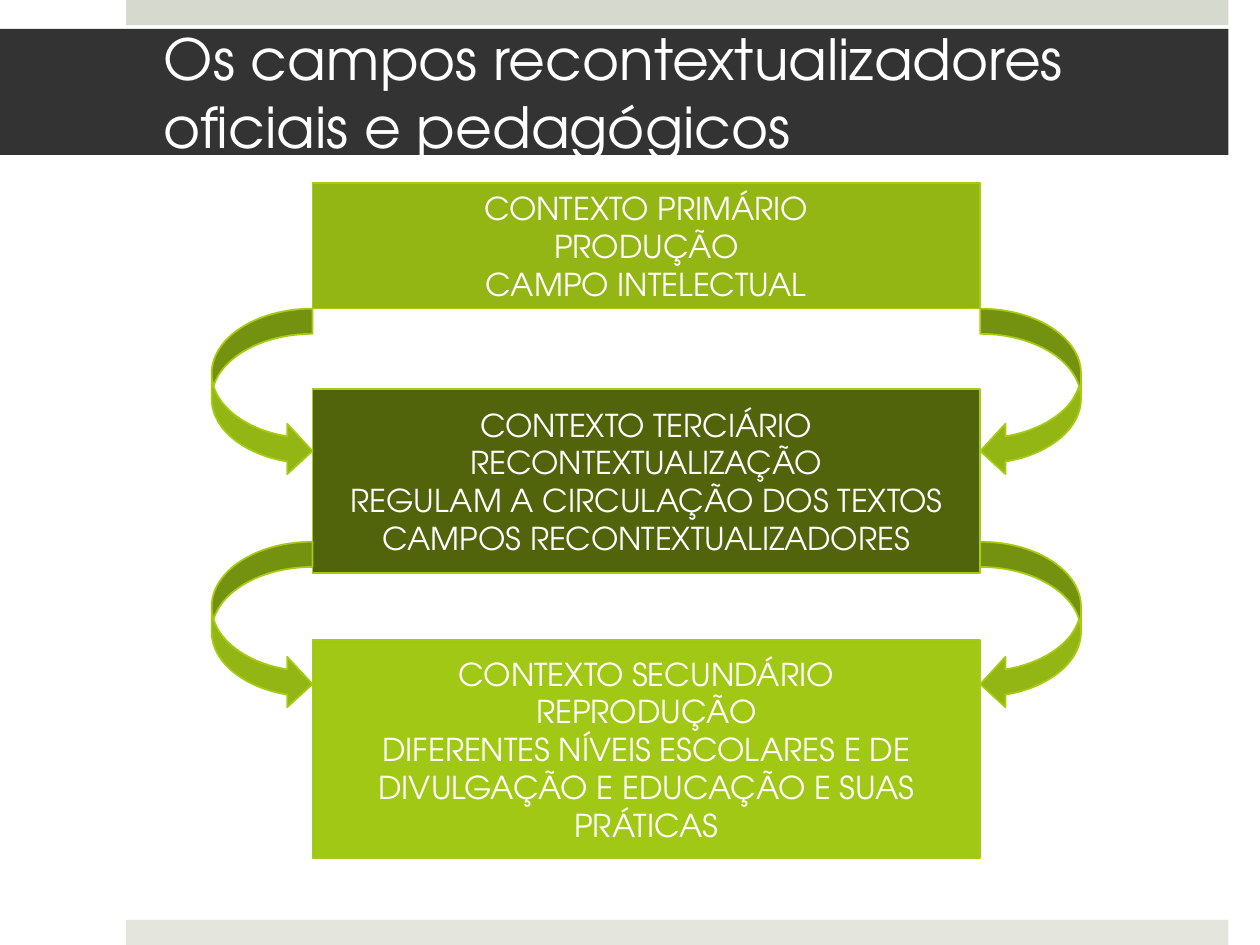
from dataclasses import dataclass

from pptx import Presentation
from pptx.dml.color import RGBColor
from pptx.enum.shapes import MSO_SHAPE
from pptx.enum.text import MSO_ANCHOR, PP_ALIGN
from pptx.util import Inches, Pt

RECT = MSO_SHAPE.RECTANGLE
RIGHT_ARROW = MSO_SHAPE.CURVED_RIGHT_ARROW
LEFT_ARROW = MSO_SHAPE.CURVED_LEFT_ARROW
MIDDLE = MSO_ANCHOR.MIDDLE
LEFT, CENTER = PP_ALIGN.LEFT, PP_ALIGN.CENTER

SLIDE_W, SLIDE_H = 10, 7.5


@dataclass(frozen=True)
class Theme:
    font: str = "TeX Gyre Adventor"
    title_size: float = 32.4
    body_size: float = 18
    text: str = "FFFFFF"
    title_band: str = "333333"
    top_band: str = "D6D9CD"
    bottom_band: str = "E4E6DE"
    primary: str = "93B614"
    tertiary: str = "51640B"
    secondary: str = "A2C816"
    outline: str = "A5CC12"


@dataclass(frozen=True)
class Context:
    top: float
    height: float
    fill: str
    lines: tuple[str, ...]


THEME = Theme()

# Column shared by the contexts, and the arrows on both of its sides
COLUMN_X, COLUMN_W = 0.248 * SLIDE_W, 0.53 * SLIDE_W
ARROW_W, ARROW_H = 0.8, 1.33
ARROW_TOPS = (2.45, 4.3)
ARROW_SIDES = (
    (RIGHT_ARROW, COLUMN_X - ARROW_W),
    (LEFT_ARROW, COLUMN_X + COLUMN_W),
)

# Bands of the page
BAND_X, BAND_H = 0.1 * SLIDE_W, 0.2
BAND_RIGHT = 0.975 * SLIDE_W

CONTEXTS = (
    Context(1.45, 1, THEME.primary,
            ("CONTEXTO PRIMÁRIO", "PRODUÇÃO", "CAMPO INTELECTUAL")),
    Context(3.09, 1.46, THEME.tertiary,
            ("CONTEXTO TERCIÁRIO", "RECONTEXTUALIZAÇÃO",
             "REGULAM A CIRCULAÇÃO DOS TEXTOS", "CAMPOS RECONTEXTUALIZADORES")),
    Context(5.08, 1.73, THEME.secondary,
            ("CONTEXTO SECUNDÁRIO", "REPRODUÇÃO",
             "DIFERENTES NÍVEIS ESCOLARES E DE DIVULGAÇÃO E EDUCAÇÃO E SUAS PRÁTICAS")),
)


def add_block(slide, preset, x: float, y: float, w: float, h: float,
              fill: str, outline: str | None = None):
    block = slide.shapes.add_shape(preset, Inches(x), Inches(y), Inches(w), Inches(h))
    block.shadow.inherit = False
    block.fill.solid()
    block.fill.fore_color.rgb = RGBColor.from_string(fill)
    if outline:
        block.line.color.rgb = RGBColor.from_string(outline)
        block.line.width = Pt(1)
    else:
        block.line.fill.background()
    return block


def write_lines(block, lines: tuple[str, ...], size: float, align) -> None:
    frame = block.text_frame
    frame.word_wrap = True
    frame.vertical_anchor = MIDDLE
    for index, line in enumerate(lines):
        paragraph = frame.add_paragraph() if index else frame.paragraphs[0]
        paragraph.alignment = align
        run = paragraph.add_run()
        run.text = line
        run.font.name = THEME.font
        run.font.size = Pt(size)
        run.font.color.rgb = RGBColor.from_string(THEME.text)


def add_context(slide, context: Context) -> None:
    block = add_block(slide, RECT, COLUMN_X, context.top, COLUMN_W, context.height,
                      context.fill, THEME.outline)
    write_lines(block, context.lines, THEME.body_size, CENTER)


def add_title(slide, title: str) -> None:
    band = add_block(slide, RECT, 0, 0.23, BAND_RIGHT, 1, THEME.title_band)
    band.text_frame.margin_left = Inches(1.3)
    band.text_frame.margin_right = Inches(0.3)
    write_lines(band, (title,), THEME.title_size, LEFT)


def main() -> None:
    deck = Presentation()
    deck.slide_width, deck.slide_height = Inches(SLIDE_W), Inches(SLIDE_H)
    slide = deck.slides.add_slide(deck.slide_layouts[6])

    # Bands at the top and bottom edges
    for y, fill in ((0, THEME.top_band), (SLIDE_H - BAND_H, THEME.bottom_band)):
        add_block(slide, RECT, BAND_X, y, BAND_RIGHT - BAND_X, BAND_H, fill)

    # Contexts from production to reproduction
    for context in CONTEXTS:
        add_context(slide, context)

    # Arrows from each context to the next
    for preset, x in ARROW_SIDES:
        for y in ARROW_TOPS:
            add_block(slide, preset, x, y, ARROW_W, ARROW_H,
                      THEME.primary, THEME.outline)

    add_title(slide, "Os campos recontextualizadores oficiais e pedagógicos")
    deck.save("out.pptx")


if __name__ == "__main__":
    main()
